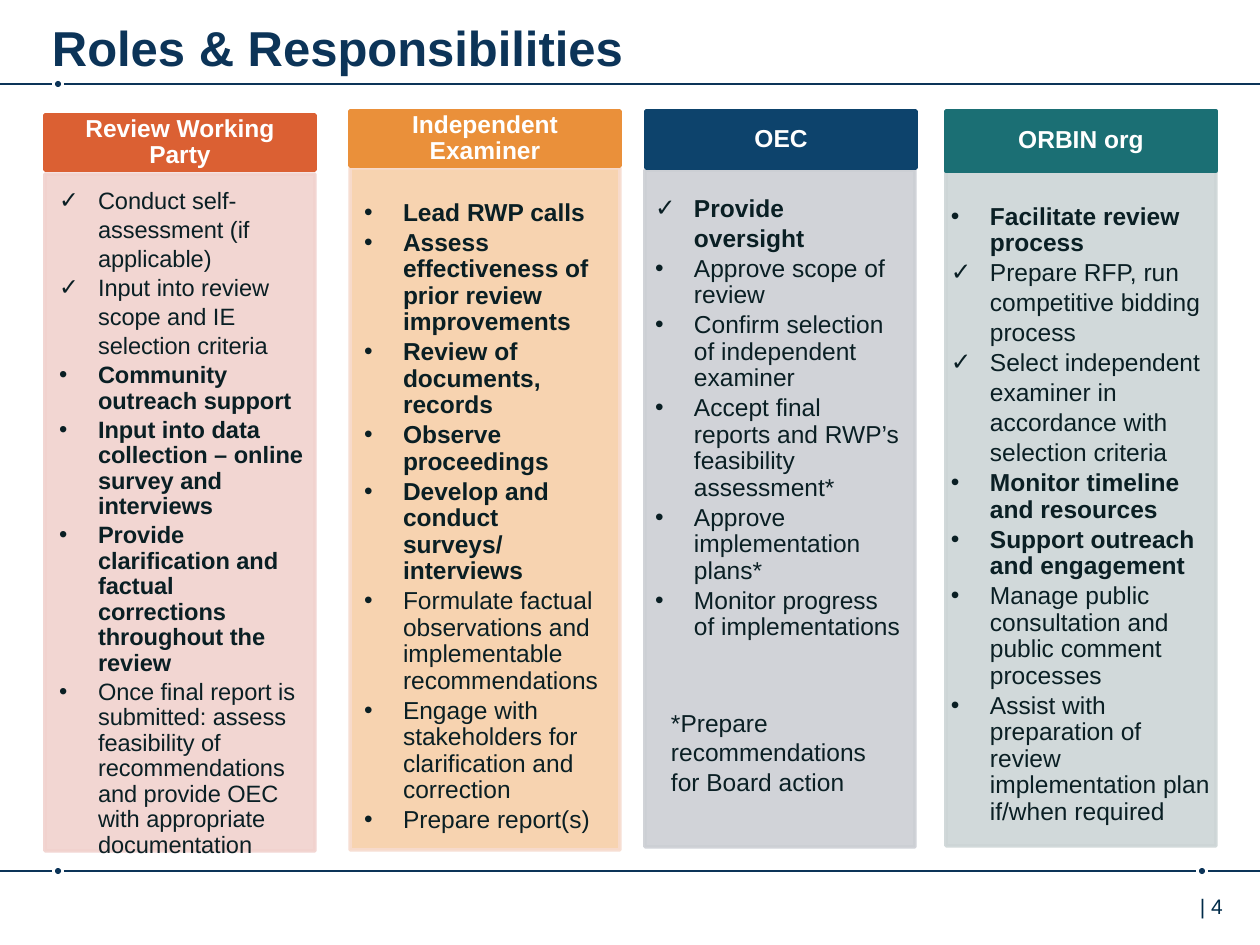
from dataclasses import dataclass

from lxml.etree import SubElement
from pptx import Presentation
from pptx.dml.color import RGBColor
from pptx.enum.shapes import MSO_CONNECTOR as Connector, MSO_SHAPE as Shape
from pptx.enum.text import MSO_ANCHOR as Anchor, PP_ALIGN as Align
from pptx.oxml.ns import qn
from pptx.util import Emu, Pt

EMU_PER_PX = 914400 / 126
COLORS = {
    "navy": "0C3458", "number": "002B49", "ink": "0A1F24", "white": "FFFFFF",
    "red": "DB6033", "red_pale": "F1D2CE",
    "orange": "EA903A", "orange_pale": "F7D3B0", "orange_edge": "F7DBCE",
    "blue": "0D436C", "blue_pale": "CCCFD4",
    "teal": "1B6F74", "teal_pale": "CDD5D6",
}
CHECK, DOT = "✓", "•"
INDENT = 39


@dataclass
class Column:
    """A role: its header, its panel and the list placed on it."""
    name: str
    color: str
    fill: str
    edge: str
    opacity: int
    header: tuple
    panel: tuple
    body: tuple
    size: float
    items: list


COLUMNS = [
    Column("Review Working Party", "red", "red_pale", "red_pale", 90,
           (45, 115, 270, 55), (45, 174, 270, 677), (49, 179, 270, 687), 13.5, [
               (CHECK, False, "Conduct self-", "assessment (if", "applicable)"),
               (CHECK, False, "Input into review", "scope and IE", "selection criteria"),
               (DOT, True, "Community outreach support"),
               (DOT, True, "Input into data collection – online survey and interviews"),
               (DOT, True, "Provide clarification and factual corrections throughout the review"),
               (DOT, False, "Once final report is submitted: assess feasibility of "
                            "recommendations and provide OEC with appropriate documentation"),
           ]),
    Column("Independent Examiner", "orange", "orange_pale", "orange_edge", 100,
           (350, 111, 270, 55), (350, 168, 270, 682), (354, 190, 260, 651), 14, [
               (DOT, True, "Lead RWP calls"),
               (DOT, True, "Assess effectiveness of prior review improvements"),
               (DOT, True, "Review of documents, records"),
               (DOT, True, "Observe proceedings"),
               (DOT, True, "Develop and conduct surveys/ interviews"),
               (DOT, False, "Formulate factual observations and implementable recommendations"),
               (DOT, False, "Engage with stakeholders for clarification and correction"),
               (DOT, False, "Prepare report(s)"),
           ]),
    Column("OEC", "blue", "blue_pale", "blue_pale", 90,
           (646, 111, 270, 57), (645, 170, 270, 677), (645, 186, 270, 677), 14, [
               (CHECK, True, "Provide", "oversight"),
               (DOT, False, "Approve scope of review"),
               (DOT, False, "Confirm selection of independent examiner"),
               (DOT, False, "Accept final reports and RWP’s feasibility assessment*"),
               (DOT, False, "Approve implementation plans*"),
               (DOT, False, "Monitor progress of implementations"),
           ]),
    Column("ORBIN org", "teal", "teal_pale", "teal_pale", 90,
           (946, 111, 270, 60), (946, 171, 270, 675), (941, 194, 291, 675), 14, [
               (DOT, True, "Facilitate review process"),
               (CHECK, False, "Prepare RFP, run", "competitive bidding", "process"),
               (CHECK, False, "Select independent", "examiner in", "accordance with",
                "selection criteria"),
               (DOT, True, "Monitor timeline and resources"),
               (DOT, True, "Support outreach and engagement"),
               (DOT, False, "Manage public consultation and public comment processes"),
               (DOT, False, "Assist with preparation of review implementation plan "
                            "if/when required"),
           ]),
]


def px(*lengths):
    """Turn pixel lengths into EMU."""
    return [Emu(round(length * EMU_PER_PX)) for length in lengths]


def rgb(name):
    """Look up a named colour."""
    return RGBColor.from_string(COLORS[name])


def set_frame(shape, insets, anchor=Anchor.TOP):
    """Set wrapping, insets and anchor, and return the text frame."""
    frame = shape.text_frame
    frame.word_wrap = True
    frame.vertical_anchor = anchor
    (frame.margin_left, frame.margin_top,
     frame.margin_right, frame.margin_bottom) = px(*insets)
    return frame


def add_run(paragraph, text, size, color, bold=False):
    """Add one formatted run."""
    run = paragraph.add_run()
    run.text = text
    run.font.name = "Arial"
    run.font.size = Pt(size)
    run.font.bold = bold
    run.font.color.rgb = rgb(color)


def set_opacity(fill_format_parent, percent):
    """Make the solid colour under an element partly transparent."""
    color = fill_format_parent.find(qn("a:solidFill"))[0]
    SubElement(color, qn("a:alpha"), val=str(percent * 1000))


def add_box(slide, kind, box, fill, edge=None):
    """Add a filled preset shape with an optional 2 pt edge."""
    shape = slide.shapes.add_shape(kind, *px(*box))
    shape.shadow.inherit = False
    shape.fill.solid()
    shape.fill.fore_color.rgb = rgb(fill)
    if edge:
        shape.line.color.rgb = rgb(edge)
        shape.line.width = Pt(2)
    else:
        shape.line.fill.background()
    return shape


def add_text(slide, box, text, size, color):
    """Add a plain text box."""
    frame = set_frame(slide.shapes.add_textbox(*px(*box)), (13, 6, 13, 6))
    add_run(frame.paragraphs[0], text, size, color)


def add_rule(slide, y, spans, dots):
    """Add a horizontal rule interrupted by dots."""
    for start, end in spans:
        line = slide.shapes.add_connector(Connector.STRAIGHT, *px(start, y, end, y))
        line.line.color.rgb = rgb("navy")
        line.line.width = Pt(1)
        SubElement(line.element.spPr, qn("a:effectLst"))
    for x in dots:
        add_box(slide, Shape.OVAL, (x - 3, y - 3, 6, 6), "navy")


def add_title(slide, text):
    """Place and format the title placeholder."""
    title = slide.shapes.title
    title.left, title.top, title.width, title.height = px(52, 6, 1104, 62)
    paragraph = set_frame(title, (0, 11, 0, 0)).paragraphs[0]
    paragraph.alignment = Align.LEFT
    add_run(paragraph, text, 28, "navy", True)


def set_bullet(paragraph, mark):
    """Indent a paragraph and hang its mark, if it has one."""
    properties = paragraph._p.get_or_add_pPr()
    indent, = px(INDENT)
    properties.set("marL", str(indent))
    properties.set("indent", str(-indent if mark else 0))
    if mark:
        SubElement(properties, qn("a:buFont"), typeface="Arial")
        SubElement(properties, qn("a:buChar"), char=mark)
    else:
        SubElement(properties, qn("a:buNone"))


def add_list(slide, column):
    """Add the list of duties of a column."""
    frame = set_frame(slide.shapes.add_textbox(*px(*column.body)), (10, 10, 14, 15))
    lines = [(mark if index == 0 else None, bold, text)
             for mark, bold, *texts in column.items
             for index, text in enumerate(texts)]
    for index, (mark, bold, text) in enumerate(lines):
        paragraph = frame.add_paragraph() if index else frame.paragraphs[0]
        set_bullet(paragraph, mark)
        paragraph.line_spacing = 0.9
        paragraph.space_after = Pt(2)
        add_run(paragraph, text, column.size, "ink", bold)


def add_column(slide, column):
    """Add the panel, header and list of a column."""
    panel = add_box(slide, Shape.RECTANGLE, column.panel, column.fill, column.edge)
    properties = panel.element.spPr
    set_opacity(properties, column.opacity)
    set_opacity(properties.find(qn("a:ln")), 90)
    header = add_box(slide, Shape.RECTANGLE, column.header, column.color, column.color)
    paragraph = set_frame(header, (14, 8, 14, 8), Anchor.MIDDLE).paragraphs[0]
    paragraph.alignment = Align.CENTER
    paragraph.line_spacing = 0.9
    add_run(paragraph, column.name, 14, "white", True)
    add_list(slide, column)


def main():
    """Build the slide and save it."""
    presentation = Presentation()
    presentation.slide_width, presentation.slide_height = px(1260, 945)
    slide = presentation.slides.add_slide(presentation.slide_layouts[5])
    add_rule(slide, 84, [(0, 52), (64, 1260)], [58])
    add_rule(slide, 871, [(0, 52), (64, 1196), (1208, 1260)], [58, 1202])
    add_text(slide, (1187, 888, 73, 50), "| 4", 12, "number")
    add_title(slide, "Roles & Responsibilities")
    for column in COLUMNS:
        add_column(slide, column)
    add_text(slide, (658, 702, 246, 102),
             "*Prepare recommendations for Board action", 14, "ink")
    presentation.save("out.pptx")


if __name__ == "__main__":
    main()
